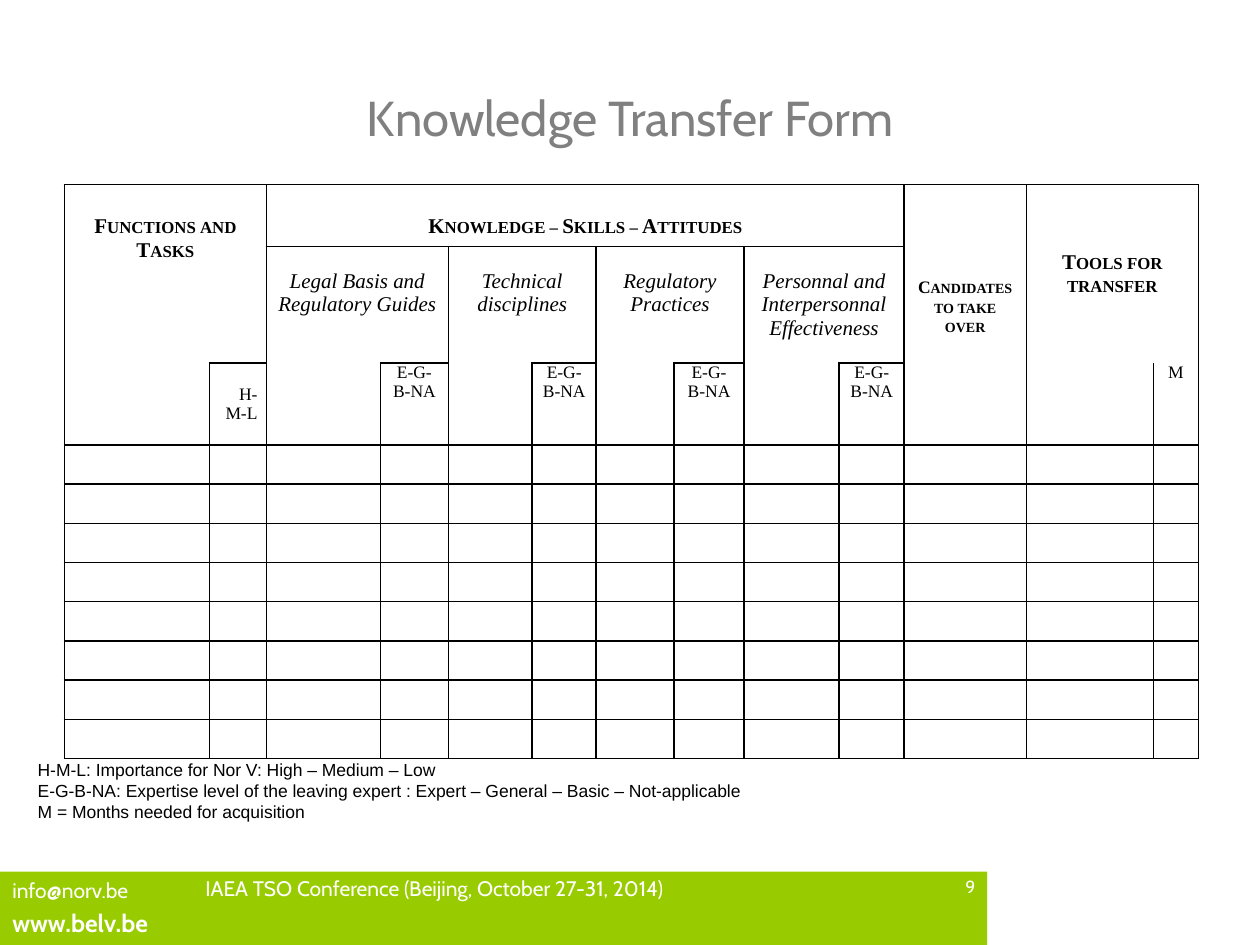
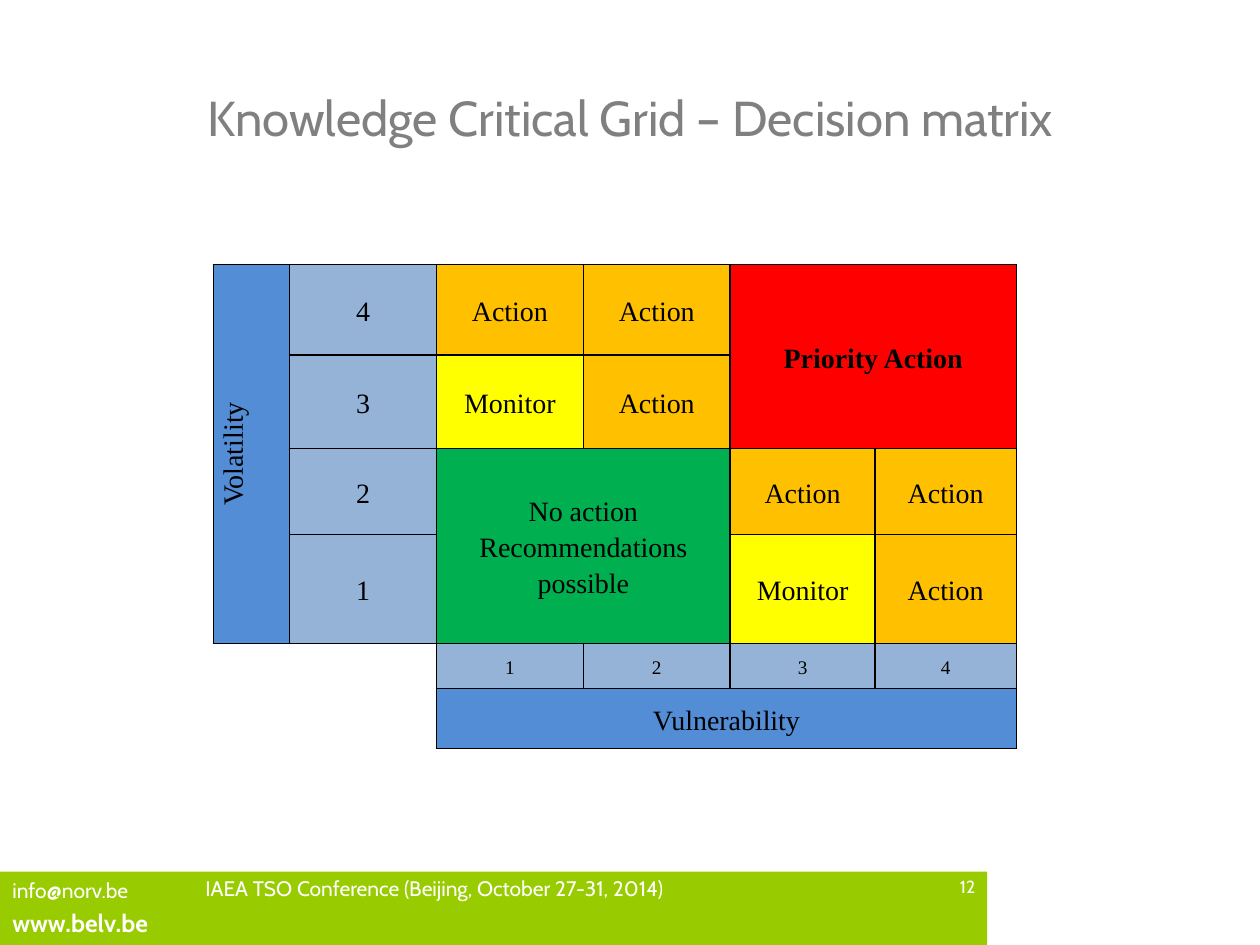
from pptx import Presentation
from pptx.dml.color import RGBColor
from pptx.enum.shapes import MSO_SHAPE
from pptx.enum.text import MSO_ANCHOR, PP_ALIGN
from pptx.oxml.ns import qn
from pptx.util import Cm, Pt
from lxml.etree import SubElement

COLORS = {
    "band": "99CC00",
    "white": "FFFFFF",
    "title": "808080",
    "black": "000000",
    "axis": "538DD5",
    "level": "95B3D7",
    "action": "FFC000",
    "monitor": "FFFF00",
    "priority": "FF0000",
    "none": "00B050",
}
SERIF = "Times New Roman"
PLAIN_STYLE = "{2D5ABB26-0587-4C30-8999-92F81FD0307C}"
ALIGN = {"l": PP_ALIGN.LEFT, "c": PP_ALIGN.CENTER, "r": PP_ALIGN.RIGHT}
ANCHOR = {"t": MSO_ANCHOR.TOP, "m": MSO_ANCHOR.MIDDLE}


def rgb(name):
    return RGBColor.from_string(COLORS[name])


def write(tf, text, size=12, font="Cabin", color="white", bold=False, italic=False,
          small_caps=False, align="l", spacing=None):
    for i, line in enumerate(text.split("\n")):
        p = tf.paragraphs[0] if i == 0 else tf.add_paragraph()
        p.alignment = ALIGN[align]
        if spacing:
            p.line_spacing = spacing
        r = p.add_run()
        r.text = line
        r.font.size = Pt(size)
        r.font.name = font
        r.font.bold = bold
        r.font.italic = italic
        r.font.color.rgb = rgb(color)
        if small_caps:
            r.font._element.set("cap", "small")


def add_text(s, x, y, w, h, text, anchor="t", wrap=True, **fmt):
    tf = s.shapes.add_textbox(Cm(x), Cm(y), Cm(w), Cm(h)).text_frame
    tf.word_wrap = wrap
    tf.vertical_anchor = ANCHOR[anchor]
    write(tf, text, **fmt)


def set_borders(cell, sides):
    tcPr = cell._tc.get_or_add_tcPr()
    for side in "LRTB":
        ln = SubElement(tcPr, qn("a:ln" + side), w=str(Pt(1)))
        if side in sides:
            fill = SubElement(ln, qn("a:solidFill"))
            SubElement(fill, qn("a:srgbClr"), val=COLORS["black"])
        else:
            SubElement(ln, qn("a:noFill"))


def fill_cell(cell, text, anchor="m", top=0, bottom=0, side=0.18, vert=None, **fmt):
    cell.margin_left = cell.margin_right = Cm(side)
    cell.margin_top, cell.margin_bottom = Cm(top), Cm(bottom)
    cell.vertical_anchor = ANCHOR[anchor]
    if vert:
        cell._tc.get_or_add_tcPr().set("vert", vert)
    if text:
        write(cell.text_frame, text, font=SERIF, color="black", **fmt)
    else:
        cell.text_frame.paragraphs[0]._p.get_or_add_endParaRPr().set("sz", "1000")


def add_grid(s, x, y, cols, rows, entries):
    frame = s.shapes.add_table(len(rows), len(cols), Cm(x), Cm(y),
                               Cm(sum(cols)), Cm(sum(rows)))
    table = frame.table
    table.first_row = table.horz_banding = False
    table._tbl.tblPr.find(qn("a:tableStyleId")).text = PLAIN_STYLE
    for col, w in zip(table.columns, cols):
        col.width = Cm(w)
    for row, h in zip(table.rows, rows):
        row.height = Cm(h)

    looks, texts = {}, {}
    for (r, c, rowspan, colspan), text, opts in entries:
        opts = dict(opts)
        look = opts.pop("sides", "LRTB"), opts.pop("fill", None)
        for i in range(r, r + rowspan):
            for j in range(c, c + colspan):
                looks[i, j] = look
        texts[r, c] = text, opts
        if rowspan * colspan > 1:
            table.cell(r, c).merge(table.cell(r + rowspan - 1, c + colspan - 1))

    for r in range(len(rows)):
        for c in range(len(cols)):
            cell = table.cell(r, c)
            sides, fill = looks.get((r, c), ("LRTB", None))
            set_borders(cell, sides)
            if fill:
                cell.fill.solid()
                cell.fill.fore_color.rgb = rgb(fill)
            else:
                cell.fill.background()
            text, opts = texts.get((r, c), ("", {}))
            fill_cell(cell, text, **opts)


def add_base(prs, title, number):
    s = prs.slides.add_slide(prs.slide_layouts[6])
    band = s.shapes.add_shape(MSO_SHAPE.RECTANGLE, 0, Cm(17.57), Cm(19.9), Cm(1.48))
    band.shadow.inherit = False
    band.fill.solid()
    band.fill.fore_color.rgb = rgb("band")
    band.line.fill.background()
    add_text(s, 0, 18.19, 3.89, 0.86, "www.belv.be", size=14, bold=True)
    add_text(s, 0, 17.57, 3.1, 0.76, "info@norv.be")
    add_text(s, 3.89, 17.53, 13.61, 0.81,
             "IAEA TSO Conference (Beijing, October 27-31, 2014)")
    add_text(s, 18.21, 17.53, 1.7, 0.81, number, size=10, align="r")
    add_text(s, 1.27, 0.76, 22.86, 3.18, title, anchor="m", size=28,
             color="title", align="c")
    return s


def add_transfer_form(prs):
    s = add_base(prs, "Knowledge Transfer Form", "9")
    cols = [2.92, 1.15, 2.3, 1.37, 1.69, 1.29, 1.57, 1.41, 1.92, 1.31, 2.46, 2.56, 0.91]
    rows = [1.25, 2.35, 1.65] + [0.79] * 8
    heading = dict(bold=True, small_caps=True, align="c")
    skill = dict(italic=True, align="c", anchor="t", top=0.47, sides="LRT")
    code = dict(size=10, align="c", anchor="t")
    entries = [
        ((0, 0, 2, 2), "Functions and Tasks",
         dict(heading, anchor="t", top=0.62, sides="LRT")),
        ((0, 2, 1, 8), "Knowledge – Skills – Attitudes",
         dict(heading, anchor="t", top=0.54, spacing=1.15)),
        ((0, 10, 3, 1), "Candidates to take over", dict(heading, size=10, bottom=0.3)),
        ((0, 11, 2, 2), "Tools for transfer", dict(heading, sides="LRT")),
        ((2, 1, 1, 1), "H-M-L", dict(size=10, align="r")),
        ((2, 12, 1, 1), "M", dict(code, sides="LRB")),
    ]
    skills = ["Legal Basis and Regulatory Guides", "Technical disciplines",
              "Regulatory Practices", "Personnal and Interpersonnal Effectiveness"]
    for i, name in enumerate(skills):
        c = 2 + 2 * i
        entries.append(((1, c, 1, 2), name, skill))
        entries.append(((2, c + 1, 1, 1), "E-G-B-NA", code))
    for c in (0, 2, 4, 6, 8, 11):
        entries.append(((2, c, 1, 1), "", dict(sides="LRB")))
    add_grid(s, 1.3, 3.72, cols, rows, entries)
    legend = ["H-M-L: Importance for Nor V: High – Medium – Low",
              "E-G-B-NA: Expertise level of the leaving expert : "
              "Expert – General – Basic – Not-applicable",
              "M = Months needed for acquisition"]
    add_text(s, 0.51, 15.16, 14.78, 1.55, "\n".join(legend), anchor="m", wrap=False,
             size=10, font="Arial", color="black")


def add_decision_matrix(prs):
    s = add_base(prs, "Knowledge Critical Grid – Decision matrix", "12")
    cols = [1.54, 2.96, 2.96, 2.96, 2.92, 2.85]
    rows = [1.83, 1.88, 1.73, 2.2, 0.91, 1.21]
    base = dict(size=16, align="c", spacing=1.15, side=0.13)
    entries = [
        ((0, 0, 4, 1), "Volatility", dict(base, fill="axis", vert="vert270")),
        ((5, 2, 1, 4), "Vulnerability", dict(base, fill="axis")),
        ((0, 4, 2, 2), "Priority Action", dict(base, fill="priority", bold=True)),
        ((2, 2, 2, 2), "No action Recommendations possible", dict(base, fill="none")),
        ((4, 0, 1, 1), "", dict(sides="T")),
        ((4, 1, 1, 1), "", dict(sides="TR")),
        ((5, 0, 1, 1), "", dict(sides="")),
        ((5, 1, 1, 1), "", dict(sides="R")),
    ]
    for i in range(4):
        entries.append(((i, 1, 1, 1), str(4 - i), dict(base, fill="level")))
        entries.append(((4, 2 + i, 1, 1), str(i + 1), dict(base, size=11, fill="level")))
    for r, c in ((0, 2), (0, 3), (1, 3), (2, 4), (2, 5), (3, 5)):
        entries.append(((r, c, 1, 1), "Action", dict(base, fill="action")))
    for r, c in ((1, 2), (3, 4)):
        entries.append(((r, c, 1, 1), "Monitor", dict(base, fill="monitor")))
    add_grid(s, 4.3, 5.33, cols, rows, entries)


def main():
    prs = Presentation()
    prs.slide_width, prs.slide_height = Cm(25.4), Cm(19.05)
    add_transfer_form(prs)
    add_decision_matrix(prs)
    prs.save("out.pptx")


if __name__ == "__main__":
    main()
